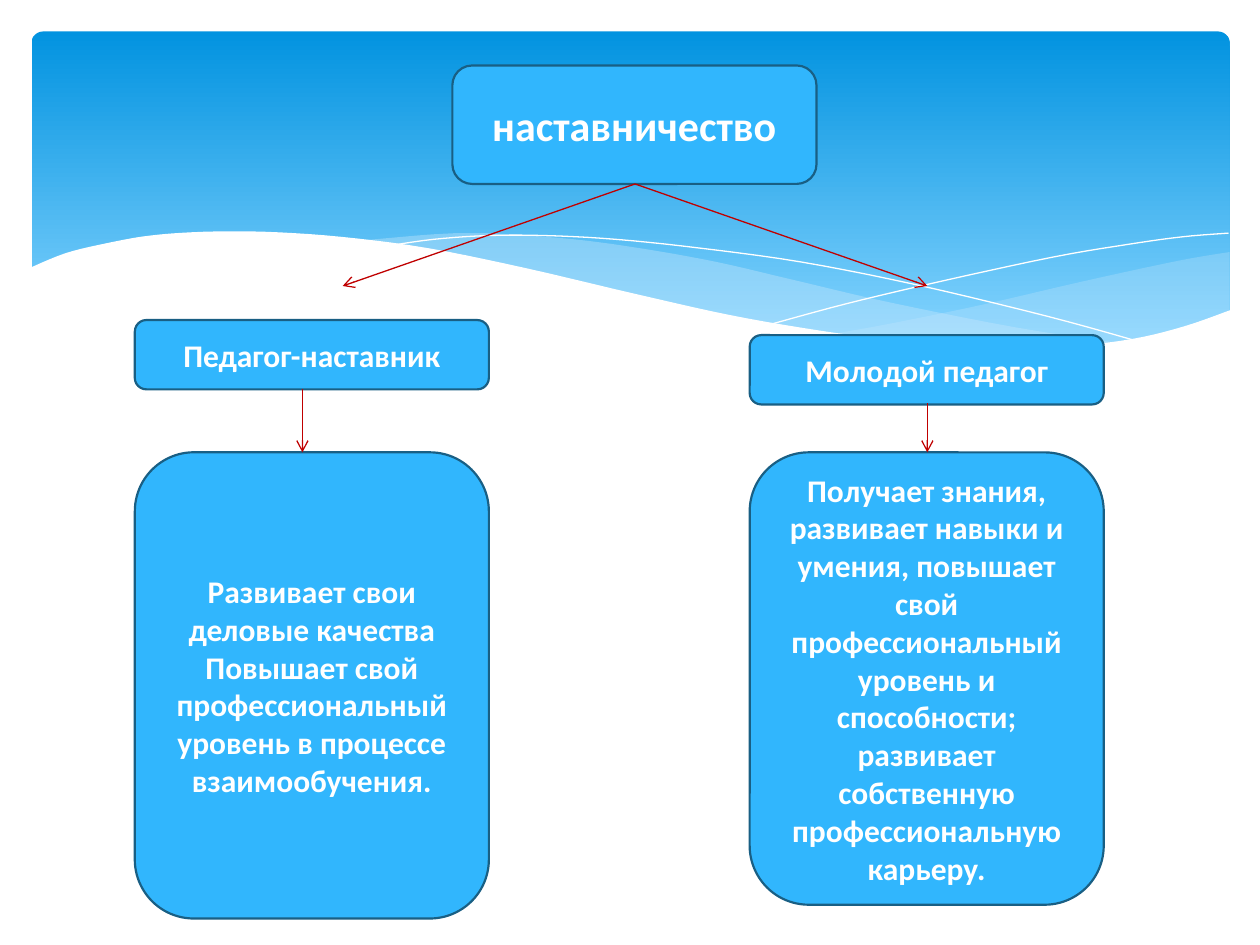
from dataclasses import dataclass
from typing import Any

from lxml.etree import SubElement
from pptx import Presentation
from pptx.dml.color import RGBColor
from pptx.enum.shapes import MSO_CONNECTOR as Connector, MSO_SHAPE as Shape
from pptx.enum.text import MSO_ANCHOR as Anchor, PP_ALIGN as Align
from pptx.oxml.ns import qn
from pptx.util import Inches, Pt

WHITE = RGBColor(0xFF, 0xFF, 0xFF)
SKY = RGBColor(0x31, 0xB6, 0xFD)
NAVY = RGBColor(0x19, 0x5F, 0x84)
RED = RGBColor(0xC0, 0x00, 0x00)
DEEP = RGBColor(0x02, 0x93, 0xE0)
LIGHT = RGBColor(0x83, 0xD3, 0xFE)
MIST = RGBColor(0xC6, 0xE7, 0xFC)

RIGHT_BAND_TOP = [(9.76, 2), (9.35, 2.07), (8.61, 2.23), (7.79, 2.42), (7.06, 2.57), (6.61, 2.65)]
RIGHT_BAND_BOTTOM = [(6.61, 2.65), (7.05, 2.71), (7.57, 2.76), (8.03, 2.78), (8.54, 2.76),
                     (8.97, 2.7), (9.35, 2.62), (9.76, 2.47)]
LONG_BAND_TOP = [(8.93, 2.73), (8.07, 2.6), (7.06, 2.4), (6.29, 2.22), (5.69, 2.08), (5.14, 1.98),
                 (4.65, 1.91), (4.2, 1.87), (3.8, 1.85), (3.44, 1.86), (2.86, 1.91)]
LONG_BAND_BOTTOM = [(2.86, 1.91), (3.62, 2.03), (4.49, 2.22), (5.3, 2.4), (6.01, 2.55), (6.65, 2.66),
                    (7.22, 2.74), (7.73, 2.77), (8.18, 2.78), (8.57, 2.77), (8.93, 2.73)]
FALLING_LINE = [(3.09, 1.95), (3.44, 1.9), (3.87, 1.87), (4.33, 1.87), (4.89, 1.9), (5.56, 1.97),
                (6.36, 2.08), (7.27, 2.26), (8.31, 2.51), (9.07, 2.72)]
RISING_LINE = [(6.13, 2.57), (6.72, 2.41), (7.48, 2.23), (8.36, 2.04), (8.95, 1.94), (9.38, 1.88), (9.75, 1.85)]
WHITE_WAVE = [(9.77, 2.46), (9.4, 2.59), (8.99, 2.69), (8.5, 2.75), (8.09, 2.77), (7.61, 2.75),
              (7.08, 2.7), (6.48, 2.62), (5.79, 2.5), (5.03, 2.33), (4.18, 2.13), (3.4, 1.97),
              (2.71, 1.88), (2.11, 1.84), (1.61, 1.84), (1.19, 1.87), (0.85, 1.93), (0.52, 2.01), (0.23, 2.13)]
WAVE_BASE = [(0.23, 3.29), (9.77, 3.29)]


def smooth(points, steps=5):
    """Return a Catmull-Rom curve through the points."""
    padded = [points[0], *points, points[-1]]
    curve = []
    for a, b, c, d in zip(padded, padded[1:], padded[2:], padded[3:]):
        for step in range(steps):
            t = step / steps
            curve.append(tuple(
                q + t / 2 * (r - p + t * (2 * p - 5 * q + 4 * r - s + t * (3 * (q - r) + s - p)))
                for p, q, r, s in zip(a, b, c, d)))
    return [*curve, points[-1]]


@dataclass
class Diagram:
    """Draw the slide's elements in one shared style."""
    slide: Any
    font: str = "Calibri"
    border: float = 1.25
    arrow_width: float = 0.75

    def backdrop(self, left, top, width, height):
        shape = self.slide.shapes.add_shape(
            Shape.ROUNDED_RECTANGLE, Inches(left), Inches(top), Inches(width), Inches(height))
        shape.adjustments[0] = 0.034
        shape.shadow.inherit = False
        shape.line.fill.background()
        shape.fill.gradient()
        shape.fill.gradient_angle = 270
        for stop, position, color in zip(shape.fill.gradient_stops, (0, 0.9), (DEEP, LIGHT)):
            stop.position = position
            stop.color.rgb = color

    def outline(self, points, close):
        start, *rest = [(Inches(x), Inches(y)) for x, y in points]
        builder = self.slide.shapes.build_freeform(*start)
        builder.add_line_segments(rest, close=close)
        shape = builder.convert_to_shape()
        shape.shadow.inherit = False
        return shape

    def area(self, points, color, opacity=100):
        shape = self.outline(points, True)
        shape.line.fill.background()
        shape.fill.solid()
        shape.fill.fore_color.rgb = color
        if opacity < 100:
            color_element = shape.fill._xPr.find(qn("a:solidFill"))[0]
            SubElement(color_element, qn("a:alpha"), val=str(opacity * 1000))

    def curve(self, points):
        shape = self.outline(smooth(points), False)
        shape.fill.background()
        shape.line.color.rgb = WHITE
        shape.line.width = Pt(0)

    def box(self, left, top, width, height, *texts, size=18):
        shape = self.slide.shapes.add_shape(
            Shape.ROUNDED_RECTANGLE, Inches(left), Inches(top), Inches(width), Inches(height))
        shape.shadow.inherit = False
        shape.fill.solid()
        shape.fill.fore_color.rgb = SKY
        shape.line.color.rgb = NAVY
        shape.line.width = Pt(self.border)
        frame = shape.text_frame
        frame.word_wrap = True
        frame.vertical_anchor = Anchor.MIDDLE
        frame.text = "\n".join(texts)
        for paragraph in frame.paragraphs:
            paragraph.alignment = Align.CENTER
            paragraph.font.name = self.font
            paragraph.font.size = Pt(size)
            paragraph.font.bold = True
            paragraph.font.color.rgb = WHITE

    def arrow(self, start, end):
        connector = self.slide.shapes.add_connector(
            Connector.STRAIGHT, *(Inches(value) for value in (*start, *end)))
        connector.line.color.rgb = RED
        connector.line.width = Pt(self.arrow_width)
        SubElement(connector.line._get_or_add_ln(), qn("a:tailEnd"), type="arrow")
        SubElement(connector._element.spPr, qn("a:effectLst"))


def main():
    presentation = Presentation()
    presentation.slide_width, presentation.slide_height = Inches(10), Inches(7.5)
    diagram = Diagram(presentation.slides.add_slide(presentation.slide_layouts[6]))

    diagram.backdrop(0.25, 0.25, 9.51, 2.7)
    diagram.area(smooth(RIGHT_BAND_TOP) + smooth(RIGHT_BAND_BOTTOM), MIST, 29)
    diagram.area(smooth(LONG_BAND_TOP) + smooth(LONG_BAND_BOTTOM), MIST, 40)
    diagram.curve(FALLING_LINE)
    diagram.curve(RISING_LINE)
    diagram.area(smooth(WHITE_WAVE) + WAVE_BASE, WHITE)

    left, right, width = 1.07, 5.95, 2.81
    diagram.box(3.59, 0.52, 2.89, 0.94, "наставничество", size=24)
    diagram.box(left, 2.54, width, 0.55, "Педагог-наставник")
    diagram.box(right, 2.66, width, 0.55, "Молодой педагог")
    diagram.box(left, 3.59, width, 3.7, "Развивает свои деловые качества",
                "Повышает свой профессиональный уровень в процессе взаимообучения.")
    diagram.box(right, 3.59, width, 3.59,
                "Получает знания, развивает навыки и умения, повышает свой профессиональный "
                "уровень и способности; развивает собственную профессиональную карьеру.")

    for end_x in (2.72, 7.36):
        diagram.arrow((5.04, 1.46), (end_x, 2.27))
    for x, top in ((2.4, 3.09), (7.36, 3.2)):
        diagram.arrow((x, top), (x, 3.59))

    presentation.save("out.pptx")


if __name__ == "__main__":
    main()
